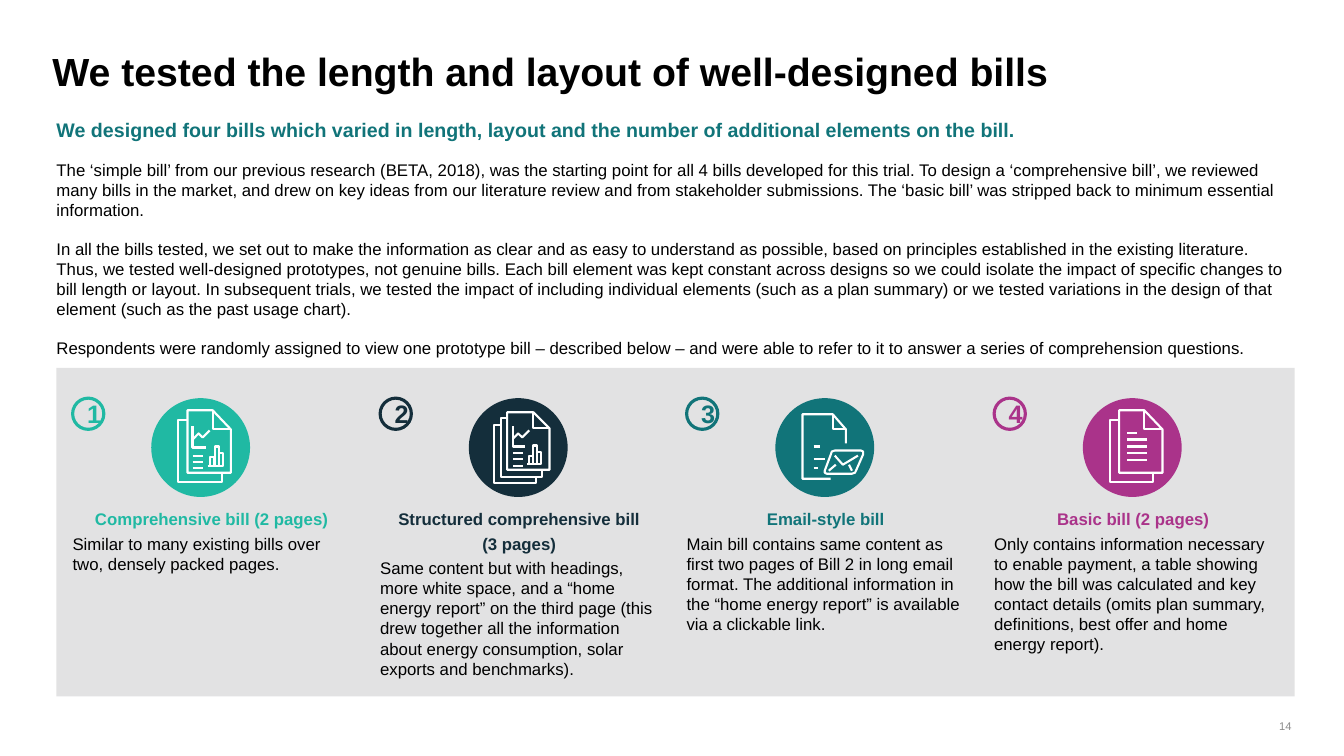
from lxml import etree
from pptx import Presentation, util as u
from pptx.dml.color import RGBColor
from pptx.enum import shapes, text
from pptx.oxml.ns import qn

PX = u.Inches(0.01)  # 100 px to the inch
WHITE, BLACK, TEAL = "FFFFFF", "000000", "117479"
LEFT, CENTER, RIGHT = text.PP_ALIGN.LEFT, text.PP_ALIGN.CENTER, text.PP_ALIGN.RIGHT


def paint(color_format, color):
    """Give a font, fill or line colour format its hex colour."""
    color_format.rgb = RGBColor.from_string(color)


def write(frame, paragraphs, before=0, after=0):
    """Fill a text frame from (text, size, bold, color, alignment) rows."""
    frame.word_wrap = True
    for index, (words, size, bold, color, alignment) in enumerate(paragraphs):
        paragraph = frame.add_paragraph() if index else frame.paragraphs[0]
        paragraph.text = words
        paragraph.alignment = alignment
        paragraph.space_before = u.Pt(before if index else 0)
        paragraph.space_after = u.Pt(after)
        for run in paragraph.runs:
            run.font.name, run.font.size, run.font.bold = "Arial", u.Pt(size), bold
            paint(run.font.color, color)


presentation = Presentation()
presentation.slide_width, presentation.slide_height = 1333 * PX, 750 * PX
slide = presentation.slides.add_slide(presentation.slide_layouts[6])

panel = slide.shapes.add_shape(
    shapes.MSO_SHAPE.RECTANGLE, 56 * PX, 365 * PX, 1228 * PX, 326 * PX)
panel.shadow.inherit = False
panel.fill.solid()
paint(panel.fill.fore_color, "E2E2E3")
panel.line.fill.background()

# Icon strokes and bars, in px from the top left of the icon's disc
two_sheets = [
    [(79, 74), (36, 74), (36, 12), (61, 12), (79, 31), (79, 74)],
    [(61, 12), (61, 31), (79, 31)],
    [(70, 74), (70, 83), (27, 83), (27, 22), (36, 22)],
]
comprehensive_strokes = two_sheets + [
    [(56, 67), (71, 67)],
    [(41, 28), (41, 49), (54, 49)],
    [(41, 41), (47, 35), (51, 39), (58, 32)],
] + [[(41, y), (51, y)] for y in (57, 63, 69)]
comprehensive_bars = [(58, 58, 9), (67, 54, 13), (63, 48, 19)]

structured_strokes = [
    [(80, 71), (38, 71), (38, 14), (64, 14), (80, 30), (80, 71)],
    [(73, 71), (73, 78), (32, 78), (32, 20), (38, 20)],
    [(67, 78), (67, 84), (25, 84), (25, 27), (32, 27)],
    [(64, 14), (64, 30), (80, 30)],
    [(58, 65), (72, 65)],
    [(44, 28), (44, 48), (56, 48)],
    [(44, 40), (49, 35), (53, 39), (60, 32)],
] + [[(44, y), (54, y)] for y in (54, 60, 67)]
structured_bars = [(60, 57, 8), (68, 53, 12), (64, 47, 18)]

email_strokes = [
    [(80, 72), (79, 74), (76, 75), (51, 75), (49, 74), (49, 72), (55, 56),
     (56, 53), (59, 52), (85, 52), (87, 53), (87, 56), (80, 72)],
    [(82, 57), (67, 66), (59, 57)],
    [(53, 72), (60, 66)],
    [(76, 72), (73, 66)],
    [(55, 80), (27, 80), (27, 16), (57, 16), (70, 31), (70, 45)],
    [(57, 16), (57, 31), (70, 31)],
] + [[(38, y), (right, y)] for right, y in ((49, 60), (42, 69), (44, 48))]

basic_strokes = two_sheets + [[(44, 35), (54, 35)]] + [
    [(44, y), (64, y)] for y in (41, 48, 54, 61)]

# Colour, disc offset, strokes, bars, heading lines, description, text height
bills = [
    ("20B9A3", 78, comprehensive_strokes, comprehensive_bars,
     ["Comprehensive bill (2 pages)"],
     "Similar to many existing bills over two, densely packed pages.", 75),
    ("142E3B", 88, structured_strokes, structured_bars,
     ["Structured comprehensive bill", "(3 pages)"],
     "Same content but with headings, more white space, and a “home energy report” on the "
     "third page (this drew together all the information about energy consumption, solar "
     "exports and benchmarks).", 180),
    (TEAL, 88, email_strokes, [],
     ["Email-style bill"],
     "Main bill contains same content as first two pages of Bill 2 in long email format. The "
     "additional information in the “home energy report” is available via a clickable link.",
     135),
    ("AA338A", 88, basic_strokes, [],
     ["Basic bill (2 pages)"],
     "Only contains information necessary to enable payment, a table showing how the bill was "
     "calculated and key contact details (omits plan summary, definitions, best offer and home "
     "energy report).", 156),
]

top = 395
for index, (color, offset, strokes, bars, headings, description, height) in enumerate(bills):
    left = 72 + round(index * 914 / 3)
    disc_left = left + offset

    badge = slide.shapes.add_shape(
        shapes.MSO_SHAPE.OVAL, left * PX, top * PX, 31 * PX, 31 * PX)
    badge.shadow.inherit = False
    badge.fill.background()
    paint(badge.line.color, color)
    badge.line.width = u.Pt(2.25)
    badge.text_frame.vertical_anchor = text.MSO_ANCHOR.MIDDLE
    write(badge.text_frame, [(str(index + 1), 18, True, color, CENTER)])

    icon = slide.shapes.add_group_shape().shapes
    disc = icon.add_shape(
        shapes.MSO_SHAPE.OVAL, disc_left * PX, top * PX, 98 * PX, 98 * PX)
    disc.shadow.inherit = False
    disc.fill.solid()
    paint(disc.fill.fore_color, color)
    disc.line.fill.background()

    outlines = [
        icon.add_shape(shapes.MSO_SHAPE.RECTANGLE, (disc_left + x) * PX, (top + y) * PX,
                       4 * PX, bar_height * PX)
        for x, y, bar_height in bars]
    for stroke in strokes:
        points = [(disc_left + x, top + y) for x, y in stroke]
        if len(points) > 2:
            builder = icon.build_freeform(*points[0], scale=PX)
            builder.add_line_segments(points[1:], close=points[0] == points[-1])
            outlines.append(builder.convert_to_shape())
        else:
            ends = [value * PX for point in points for value in point]
            line = icon.add_connector(shapes.MSO_CONNECTOR.STRAIGHT, *ends)
            paint(line.line.color, WHITE)
            line.line.width = u.Pt(1.5)
            etree.SubElement(line._element.spPr, qn("a:effectLst"))
    for outline in outlines:
        outline.shadow.inherit = False
        outline.fill.background()
        paint(outline.line.color, WHITE)
        outline.line.width = u.Pt(1.5)

    caption = slide.shapes.add_textbox(
        left * PX, 500 * PX, 276 * PX, height * PX).text_frame
    caption.margin_left = caption.margin_right = 0
    rows = [(heading, 12, True, color, CENTER) for heading in headings]
    write(caption, rows + [(description, 12, False, BLACK, LEFT)], after=3)

body_texts = [
    "The ‘simple bill’ from our previous research (BETA, 2018), was the starting point for all 4 "
    "bills developed for this trial. To design a ‘comprehensive bill’, we reviewed many bills in "
    "the market, and drew on key ideas from our literature review and from stakeholder "
    "submissions. The ‘basic bill’ was stripped back to minimum essential information.",
    "In all the bills tested, we set out to make the information as clear and as easy to "
    "understand as possible, based on principles established in the existing literature. Thus, "
    "we tested well-designed prototypes, not genuine bills. Each bill element was kept constant "
    "across designs so we could isolate the impact of specific changes to bill length or layout. "
    "In subsequent trials, we tested the impact of including individual elements (such as a plan "
    "summary) or we tested variations in the design of that element (such as the past usage "
    "chart).",
    "Respondents were randomly assigned to view one prototype bill – described below – and were "
    "able to refer to it to answer a series of comprehension questions.",
]
lead = ("We designed four bills which varied in length, layout and the number of additional "
        "elements on the bill.", 14, True, TEAL, LEFT)
title = ("We tested the length and layout of well-designed bills", 28, True, BLACK, LEFT)
page_number = ("14", 8, False, "8C8C8C", RIGHT)

frames = []
for box, rows, before, after in [
    ((56, 117, 1225, 248),
     [lead] + [(words, 12, False, BLACK, LEFT) for words in body_texts], 7, 6),
    ((52, 52, 1228, 42), [title], 0, 0),
    ((1236, 714, 45, 13), [page_number], 0, 0),
]:
    frame = slide.shapes.add_textbox(*[value * PX for value in box]).text_frame
    frame.margin_left = frame.margin_right = frame.margin_top = frame.margin_bottom = 0
    write(frame, rows, before, after)
    frames.append(frame)
frames[1].paragraphs[0].line_spacing = 0.9
frames[2].vertical_anchor = text.MSO_ANCHOR.BOTTOM

presentation.save("out.pptx")
